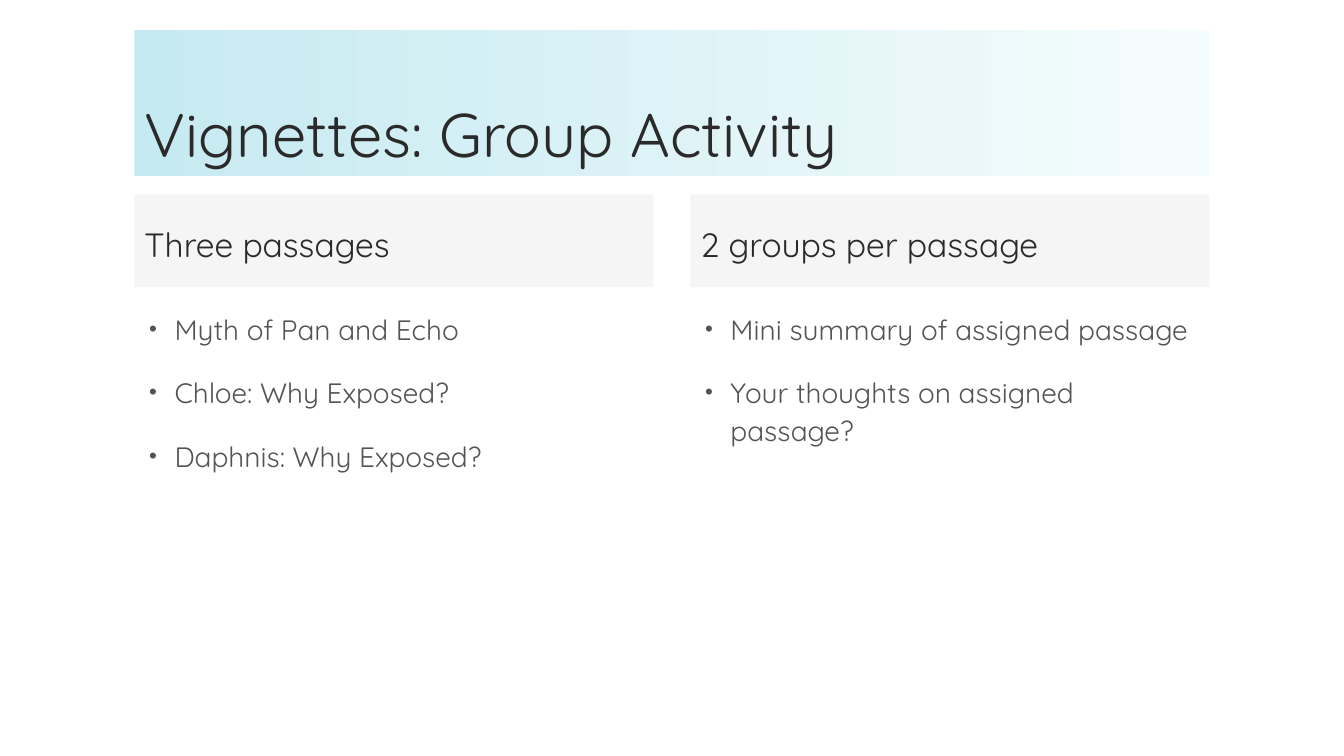
from dataclasses import dataclass

from lxml import etree
from pptx import Presentation
from pptx.dml.color import RGBColor
from pptx.enum import shapes, text
from pptx.oxml import ns
from pptx.util import Cm, Pt


@dataclass(frozen=True)
class Theme:
    """Colours, font and type sizes of the slide."""
    font: str = "Quicksand"
    dark: str = "2A2A2A"
    body: str = "545454"
    panel: str = "BFBFBF"
    panel_alpha: int = 15
    band_left: str = "C6EAF1"
    band_right: str = "F5FCFD"
    title_pt: int = 44
    heading_pt: int = 24
    bullet_pt: int = 20
    gap_pt: int = 18
    title_spacing: float = 0.9
    spacing: float = 1.14


THEME = Theme()
COLUMNS = [
    ("Three passages",
     ["Myth of Pan and Echo", "Chloe: Why Exposed?", "Daphnis: Why Exposed?"]),
    ("2 groups per passage",
     ["Mini summary of assigned passage", "Your thoughts on assigned passage?"]),
]


def add_sub(parent, tag, **attrs):
    """Append a DrawingML element to parent."""
    return etree.SubElement(parent, ns.qn(tag), attrs)


def add_run(p, words, size, color, spacing):
    """Write one styled run into a paragraph."""
    p.alignment = text.PP_ALIGN.LEFT
    p.line_spacing = spacing
    r = p.add_run()
    r.text = words
    r.font.name = THEME.font
    r.font.size = Pt(size)
    r.font.color.rgb = RGBColor.from_string(color)


def add_panel(s, x, y, w, h, anchor):
    """Add a borderless rectangle with a wrapping text frame."""
    sp = s.shapes.add_shape(shapes.MSO_SHAPE.RECTANGLE, Cm(x), Cm(y), Cm(w), Cm(h))
    sp.shadow.inherit = False
    sp.line.fill.background()
    sp.text_frame.word_wrap = True
    sp.text_frame.vertical_anchor = anchor
    return sp


def add_title(s, x, y, w, h):
    """Place the title on its gradient band."""
    sp = add_panel(s, x, y, w, h, text.MSO_ANCHOR.BOTTOM)
    sp.fill.gradient()
    sp.fill.gradient_angle = 0
    for stop, color in zip(sp.fill.gradient_stops, (THEME.band_left, THEME.band_right)):
        stop.color.rgb = RGBColor.from_string(color)
    add_run(sp.text_frame.paragraphs[0], "Vignettes: Group Activity",
            THEME.title_pt, THEME.dark, THEME.title_spacing)


def add_heading(s, x, y, w, h, words):
    """Place a column heading on a translucent grey panel."""
    sp = add_panel(s, x, y, w, h, text.MSO_ANCHOR.MIDDLE)
    sp.fill.solid()
    sp.fill.fore_color.rgb = RGBColor.from_string(THEME.panel)
    clr = sp.fill._xPr.find(".//" + ns.qn("a:srgbClr"))
    add_sub(clr, "a:alpha", val=str(THEME.panel_alpha * 1000))
    add_run(sp.text_frame.paragraphs[0], words,
            THEME.heading_pt, THEME.dark, THEME.spacing)


def add_bullets(s, x, y, w, h, items):
    """Place a bulleted list in the given box."""
    tf = s.shapes.add_textbox(Cm(x), Cm(y), Cm(w), Cm(h)).text_frame
    tf.word_wrap = True
    for i, item in enumerate(items):
        p = tf.add_paragraph() if i else tf.paragraphs[0]
        pPr = p._p.get_or_add_pPr()
        pPr.set("marL", str(Cm(0.76)))
        pPr.set("indent", str(-Cm(0.64)))
        add_sub(add_sub(pPr, "a:buClr"), "a:srgbClr", val=THEME.body)
        add_sub(pPr, "a:buSzPct", val="80000")
        add_sub(pPr, "a:buFont", typeface="Arial")
        add_sub(pPr, "a:buChar", char="•")
        if i:
            p.space_before = Pt(THEME.gap_pt)
        add_run(p, item, THEME.bullet_pt, THEME.body, THEME.spacing)


def add_column(s, x, y, w, h, heading, items):
    """Stack a heading panel and its bullets."""
    head_h, list_top = 2.34, 2.72
    add_heading(s, x, y, w, head_h, heading)
    add_bullets(s, x, y + list_top, w, h - list_top, items)


def add_comparison(s, x, y, w, h):
    """Lay out the title band above equal columns."""
    title_h, columns_top, gutter = 3.68, 4.14, 0.93
    add_title(s, x, y, w, title_h)
    col_w = (w - gutter * (len(COLUMNS) - 1)) / len(COLUMNS)
    for i, (heading, items) in enumerate(COLUMNS):
        add_column(s, x + i * (col_w + gutter), y + columns_top,
                   col_w, h - columns_top, heading, items)


def main():
    """Build and save the slide."""
    prs = Presentation()
    prs.slide_width, prs.slide_height = Cm(33.87), Cm(19.05)
    s = prs.slides.add_slide(prs.slide_layouts[6])
    add_comparison(s, 3.39, 0.76, 27.09, 16.39)
    prs.save("out.pptx")


if __name__ == "__main__":
    main()
